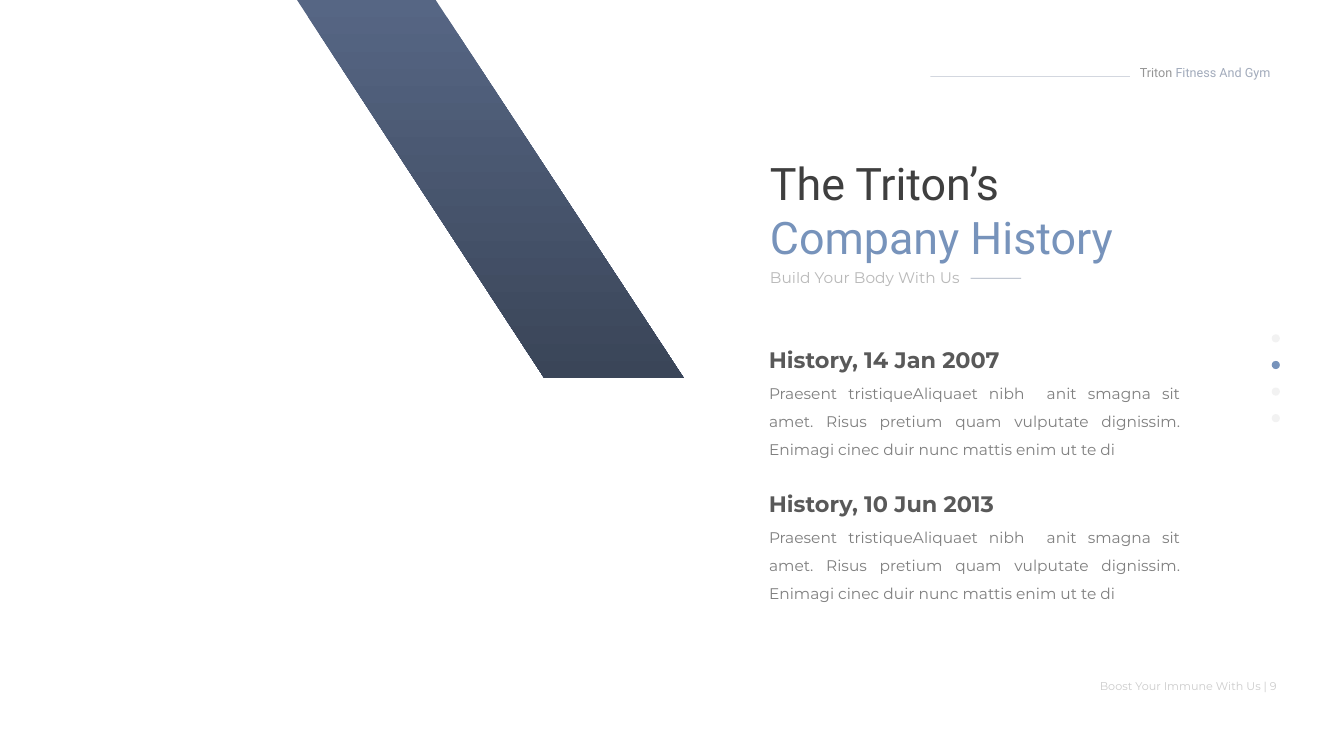
from dataclasses import dataclass

from lxml.etree import SubElement
from pptx import Presentation
from pptx.dml.color import RGBColor as Color
from pptx.enum.shapes import MSO_CONNECTOR as Connector, MSO_SHAPE as Shape
from pptx.enum.text import MSO_AUTO_SIZE as AutoSize, PP_ALIGN as Align
from pptx.oxml.ns import qn
from pptx.util import Pt


@dataclass(frozen=True)
class Theme:
    heading_font: str = "Roboto"
    body_font: str = "Montserrat"
    dark: str = "3F3F3F"
    navy: str = "566684"
    deep_navy: str = "3A4558"
    blue: str = "7793BB"
    entry_title: str = "595959"
    gray: str = "7F7F7F"
    footer: str = "CCCCCC"
    pale: str = "F2F2F2"
    title_size: float = 32
    entry_size: float = 16
    body_size: float = 11
    brand_size: float = 9
    footer_size: float = 8


def set_opacity(fill, percent):
    """Make a solid fill partly transparent; 100 leaves it opaque."""
    if percent < 100:
        color = fill._xPr.find(qn("a:solidFill"))[0]
        SubElement(color, qn("a:alpha"), val=str(percent * 1000))


class SlideBuilder:
    def __init__(self, slide, theme):
        self.shapes = slide.shapes
        self.theme = theme

    def text(self, content, left, top, width, height, *, size, color=None, font=None,
             bold=False, align=Align.LEFT, spacing=None, wrap=True, opacity=100):
        """Add a text box; content is a string or a list of (text, color) spans."""
        box = self.shapes.add_textbox(Pt(left), Pt(top), Pt(width), Pt(height))
        frame = box.text_frame
        frame.word_wrap = wrap
        frame.auto_size = AutoSize.SHAPE_TO_FIT_TEXT
        para = frame.paragraphs[0]
        para.alignment = align
        para.line_spacing = spacing
        spans = [(content, color)] if isinstance(content, str) else content
        for words, span_color in spans:
            span = para.add_run()
            span.text = words
            span.font.name = font or self.theme.body_font
            span.font.size = Pt(size)
            span.font.bold = bold
            span.font.fill.solid()
            span.font.fill.fore_color.rgb = Color.from_string(span_color)
            set_opacity(span.font.fill, opacity)

    def rule(self, left, top, width, opacity):
        line = self.shapes.add_connector(
            Connector.STRAIGHT, Pt(left), Pt(top), Pt(left + width), Pt(top))
        line.line.width = Pt(0.5)
        line.line.fill.solid()
        line.line.fill.fore_color.rgb = Color.from_string(self.theme.navy)
        set_opacity(line.line.fill, opacity)
        SubElement(line._element.spPr, qn("a:effectLst"))

    def dot(self, left, top, diameter, color):
        dot = self.shapes.add_shape(
            Shape.OVAL, Pt(left), Pt(top), Pt(diameter), Pt(diameter))
        dot.shadow.inherit = False
        dot.fill.solid()
        dot.fill.fore_color.rgb = Color.from_string(color)
        dot.line.fill.background()

    def gradient_band(self, corners, colors):
        """Draw a closed outline filled from the first color down to the last."""
        points = [(Pt(x), Pt(y)) for x, y in corners]
        outline = self.shapes.build_freeform(*points[0])
        outline.add_line_segments(points[1:], close=True)
        band = outline.convert_to_shape()
        band.shadow.inherit = False
        band.line.fill.background()
        band.fill.gradient()
        band.fill.gradient_angle = 270
        for stop, color in zip(band.fill.gradient_stops, colors):
            stop.color.rgb = Color.from_string(color)

    def entry(self, top, title, body):
        theme = self.theme
        self.text(title, 542.2, top, 210, 26.6, size=theme.entry_size,
                  color=theme.entry_title, bold=True)
        self.text(body, 542.2, top + 21, 308.2, 65, size=theme.body_size,
                  color=theme.gray, align=Align.JUSTIFY, spacing=1.5)


def main():
    deck = Presentation()
    deck.slide_width, deck.slide_height = Pt(960), Pt(540)
    theme = Theme()
    page = SlideBuilder(deck.slides.add_slide(deck.slide_layouts[6]), theme)

    page.gradient_band([(212.2, 0), (311.2, 0), (488.4, 270), (388.8, 270)],
                       [theme.navy, theme.deep_navy])

    page.text([("Triton ", theme.dark), ("Fitness And Gym", theme.navy)],
              807.1, 42.5, 113.8, 18, size=theme.brand_size,
              font=theme.heading_font, wrap=False, opacity=55)
    page.rule(664.6, 54.7, 142.5, opacity=25)

    active_dot = 1
    for index in range(4):
        color = theme.blue if index == active_dot else theme.pale
        page.dot(908.4, 238.8 + 19 * index, 5.8, color)

    page.text([("The Triton’s ", theme.dark), ("Company History", theme.blue)],
              542.9, 108, 276.5, 85, size=theme.title_size, font=theme.heading_font)
    page.text("Build Your Body With Us", 542.9, 188, 152, 20.6, size=theme.body_size,
              color=theme.gray, wrap=False, opacity=55)
    page.rule(693.4, 198.7, 36, opacity=55)

    story = ("Praesent tristiqueAliquaet nibh  anit smagna sit amet. "
             "Risus pretium quam vulputate dignissim. "
             "Enimagi cinec duir nunc mattis enim ut te di")
    for index, date in enumerate(["14 Jan 2007", "10 Jun 2013"]):
        page.entry(243.4 + 103 * index, f"History, {date}", story)

    page.text("Boost Your Immune With Us | 9", 777.6, 481.7, 141.8, 17,
              size=theme.footer_size, color=theme.footer, align=Align.RIGHT, wrap=False)

    deck.save("out.pptx")


if __name__ == "__main__":
    main()
